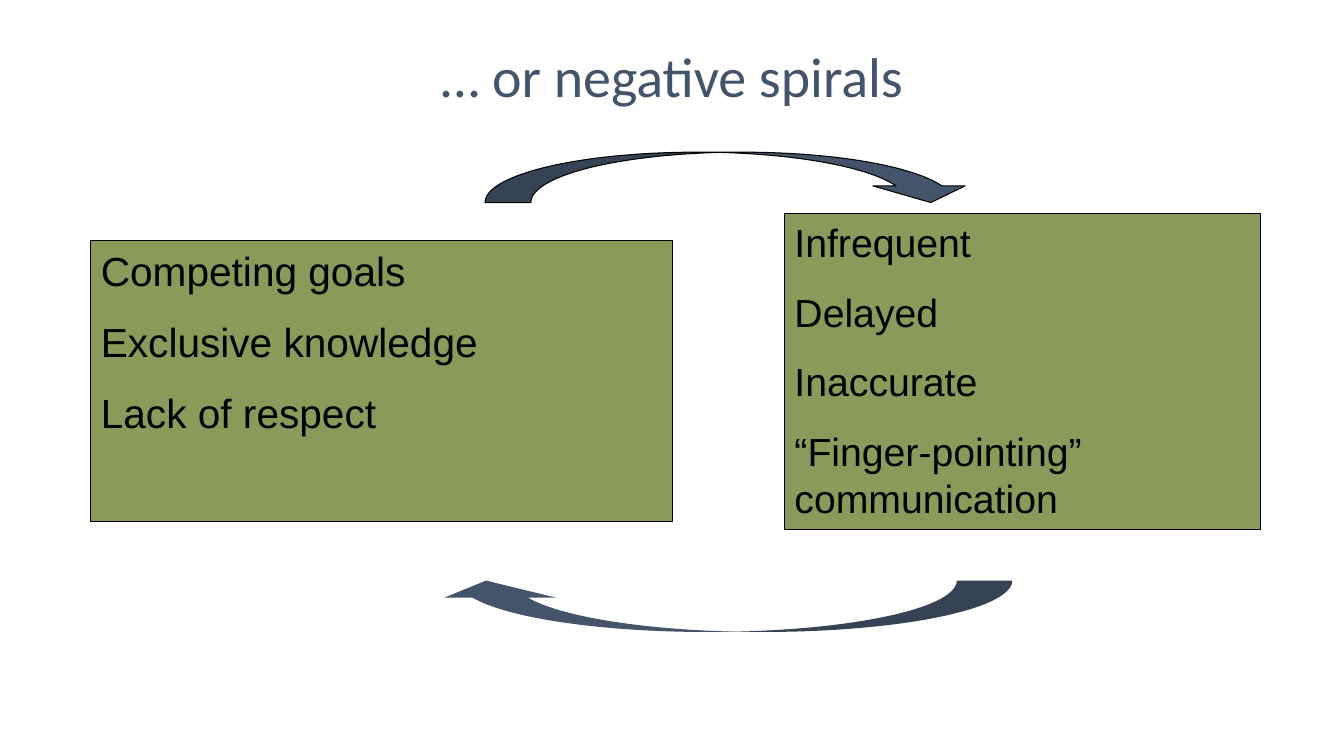
import pptx
import pptx.dml.color
import pptx.enum.shapes
import pptx.enum.text
import pptx.util
from dataclasses import dataclass
from lxml import etree
from pptx.util import Inches

ARROWS = pptx.enum.shapes.MSO_SHAPE
ANCHORS = pptx.enum.text.MSO_ANCHOR


@dataclass(frozen=True)
class Theme:
    ink: str = "000000"
    slate: str = "44546A"
    olive: str = "899A5B"
    title_font: str = "Calibri"
    list_font: str = "Arial"
    title_size: int = 40
    causes_size: int = 29
    effects_size: int = 28
    list_gap: int = 16
    outline: float = 0.75


THEME = Theme()


def rgb(code):
    return pptx.dml.color.RGBColor.from_string(code)


def place(shape, left, top, width, height):
    shape.left, shape.top = Inches(left), Inches(top)
    shape.width, shape.height = Inches(width), Inches(height)


def paint(shape, fill, outlined=True):
    shape.fill.solid()
    shape.fill.fore_color.rgb = rgb(fill)
    if outlined:
        shape.line.color.rgb = rgb(THEME.ink)
        shape.line.width = pptx.util.Pt(THEME.outline)
    else:
        shape.line.fill.background()


def prepare_frame(shape, anchor):
    frame = shape.text_frame
    frame.word_wrap = True
    frame.auto_size = pptx.enum.text.MSO_AUTO_SIZE.NONE
    frame.vertical_anchor = anchor
    frame.margin_left = frame.margin_right = Inches(0.1)
    frame.margin_top = frame.margin_bottom = Inches(0.05)
    return frame


def add_run(paragraph, wording, font, size, color):
    run = paragraph.add_run()
    run.text = wording
    run.font.name = font
    run.font.size = pptx.util.Pt(size)
    run.font.color.rgb = rgb(color)


def remove_bullet(paragraph):
    properties = paragraph._p.get_or_add_pPr()
    properties.set("marL", "0")
    properties.set("indent", "0")
    etree.SubElement(properties, pptx.oxml.ns.qn("a:buNone"))


def set_title(title, wording):
    place(title, 0, 0.24, 13.33, 0.89)
    heading = prepare_frame(title, ANCHORS.BOTTOM).paragraphs[0]
    heading.alignment = pptx.enum.text.PP_ALIGN.CENTER
    add_run(heading, wording, THEME.title_font, THEME.title_size, THEME.slate)


def set_list(panel, box, items, size):
    place(panel, *box)
    paint(panel, THEME.olive)
    frame = prepare_frame(panel, ANCHORS.TOP)
    for index, item in enumerate(items):
        entry = frame.add_paragraph() if index else frame.paragraphs[0]
        entry.space_before = pptx.util.Pt(THEME.list_gap if index else 0)
        remove_bullet(entry)
        add_run(entry, item, THEME.list_font, size, THEME.ink)


def add_curved_arrow(slide, kind, box, bends, rotation=0, outlined=True):
    arrow = slide.shapes.add_shape(kind, *map(Inches, box))
    arrow.rotation = rotation
    arrow.shadow.inherit = False
    for index, bend in enumerate(bends):
        arrow.adjustments[index] = bend
    paint(arrow, THEME.slate, outlined)


def main():
    deck = pptx.Presentation()
    deck.slide_width, deck.slide_height = Inches(13.33), Inches(7.5)
    slide = deck.slides.add_slide(deck.slide_layouts.get_by_name("Two Content"))
    title, causes, effects = list(slide.placeholders)[:3]

    set_title(title, "… or negative spirals")
    set_list(causes, (0.9, 2.39, 5.77, 2.78),
             ["Competing goals", "Exclusive knowledge", "Lack of respect"],
             THEME.causes_size)
    set_list(effects, (7.78, 2.12, 4.72, 3.13),
             ["Infrequent", "Delayed", "Inaccurate",
              "“Finger-pointing” communication"],
             THEME.effects_size)
    add_curved_arrow(slide, ARROWS.CURVED_DOWN_ARROW, (4.81, 1.51, 4.88, 0.5),
                     (0.91, 1.83, 0.33))
    add_curved_arrow(slide, ARROWS.CURVED_LEFT_ARROW, (6.9, 3.13, 0.51, 5.77),
                     (1.08, 2.16, 0.33), rotation=90, outlined=False)
    deck.save("out.pptx")


if __name__ == "__main__":
    main()
